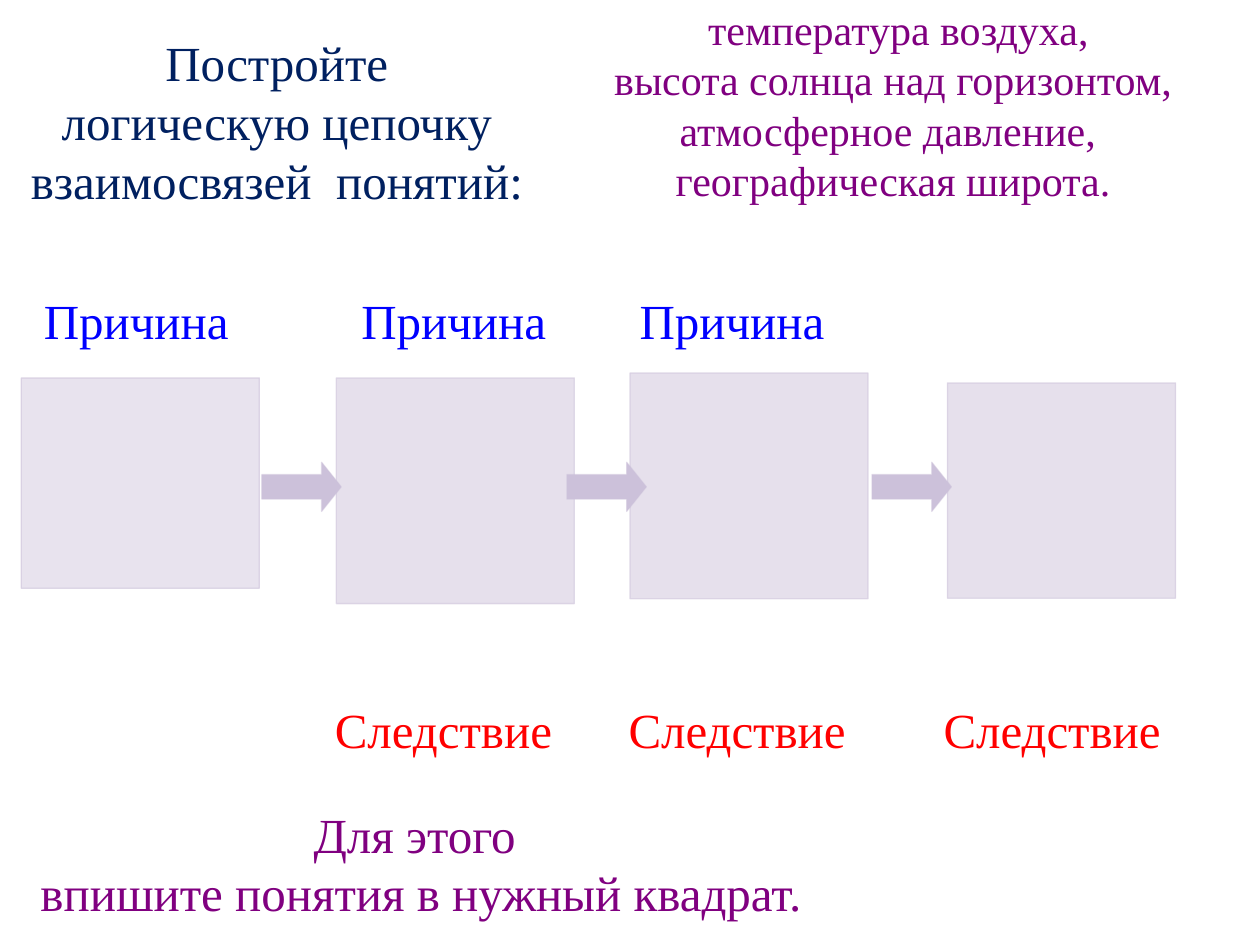
"""Build a slide with a cause-and-effect chain of four empty squares."""
from lxml import etree
from pptx import Presentation
from pptx.dml.color import RGBColor
from pptx.enum.shapes import MSO_SHAPE
from pptx.enum.text import PP_ALIGN
from pptx.oxml.ns import qn
from pptx.util import Cm, Pt

RECTANGLE = MSO_SHAPE.RECTANGLE
RIGHT_ARROW = MSO_SHAPE.RIGHT_ARROW
CENTER = PP_ALIGN.CENTER
NAVY = RGBColor(0x00, 0x20, 0x60)
PURPLE = RGBColor(0x80, 0x00, 0x80)
BLUE = RGBColor(0x00, 0x00, 0xFF)
RED = RGBColor(0xFF, 0x00, 0x00)
LILAC = RGBColor(0xCC, 0xC1, 0xDA)

deck = Presentation()
deck.slide_width, deck.slide_height = Cm(25.4), Cm(19.05)
page = deck.slides.add_slide(deck.slide_layouts[6])


def add_text(text, left, top, width, height, color, size=28, inset=0.13):
    box = page.shapes.add_textbox(Cm(left), Cm(top), Cm(width), Cm(height))
    frame = box.text_frame
    frame.word_wrap = False
    frame.margin_left = frame.margin_right = 0
    frame.margin_top = Cm(inset)
    for index, line in enumerate(text.split("\n")):
        para = frame.paragraphs[0] if index == 0 else frame.add_paragraph()
        para.alignment = CENTER
        span = para.add_run()
        span.text = line
        span.font.name = "Times New Roman"
        span.font.size = Pt(size)
        span.font.color.rgb = color


def add_block(kind, left, top, width, height, fill_alpha, line_alpha):
    block = page.shapes.add_shape(kind, Cm(left), Cm(top), Cm(width), Cm(height))
    block.shadow.inherit = False
    block.fill.solid()
    block.fill.fore_color.rgb = LILAC
    block.line.color.rgb = LILAC
    block.line.width = Pt(0.75)
    colors = block.element.spPr.iter(qn("a:srgbClr"))
    for color, alpha in zip(list(colors), (fill_alpha, line_alpha)):
        etree.SubElement(color, qn("a:alpha")).set("val", str(alpha * 1000))
    if kind == RIGHT_ARROW:
        block.adjustments[1] = 0.4


add_text("Постройте\n логическую цепочку \nвзаимосвязей  понятий:",
         0.48, 0.53, 10.2, 3.2, NAVY)
add_text(" температура воздуха,\n высота солнца над горизонтом, \n"
         "атмосферное давление, \nгеографическая широта.",
         11.3, -1.07, 13.41, 6.2, PURPLE, size=24, inset=1.14)
add_text("Для этого\n впишите понятия в нужный квадрат.",
         0.44, 16.08, 15.84, 2.24, PURPLE)

for left in (0.79, 7.19, 12.8):
    add_text("Причина", left, 5.72, 3.91, 1.12, BLUE)
for left in (6.68, 12.6, 18.95):
    add_text("Следствие", left, 13.97, 4.52, 1.12, RED)

for left, top, width, height, fill_alpha, line_alpha in (
    (0.43, 7.62, 4.8, 4.24, 44, 61),
    (6.78, 7.62, 4.8, 4.55, 49, 54),
    (12.7, 7.52, 4.8, 4.55, 49, 54),
    (19.1, 7.72, 4.6, 4.34, 49, 54),
):
    add_block(RECTANGLE, left, top, width, height, fill_alpha, line_alpha)
for step in range(3):
    add_block(RIGHT_ARROW, 5.28 + 6.15 * step, 9.32, 1.6, 0.99, 100, 50)

deck.save("out.pptx")
